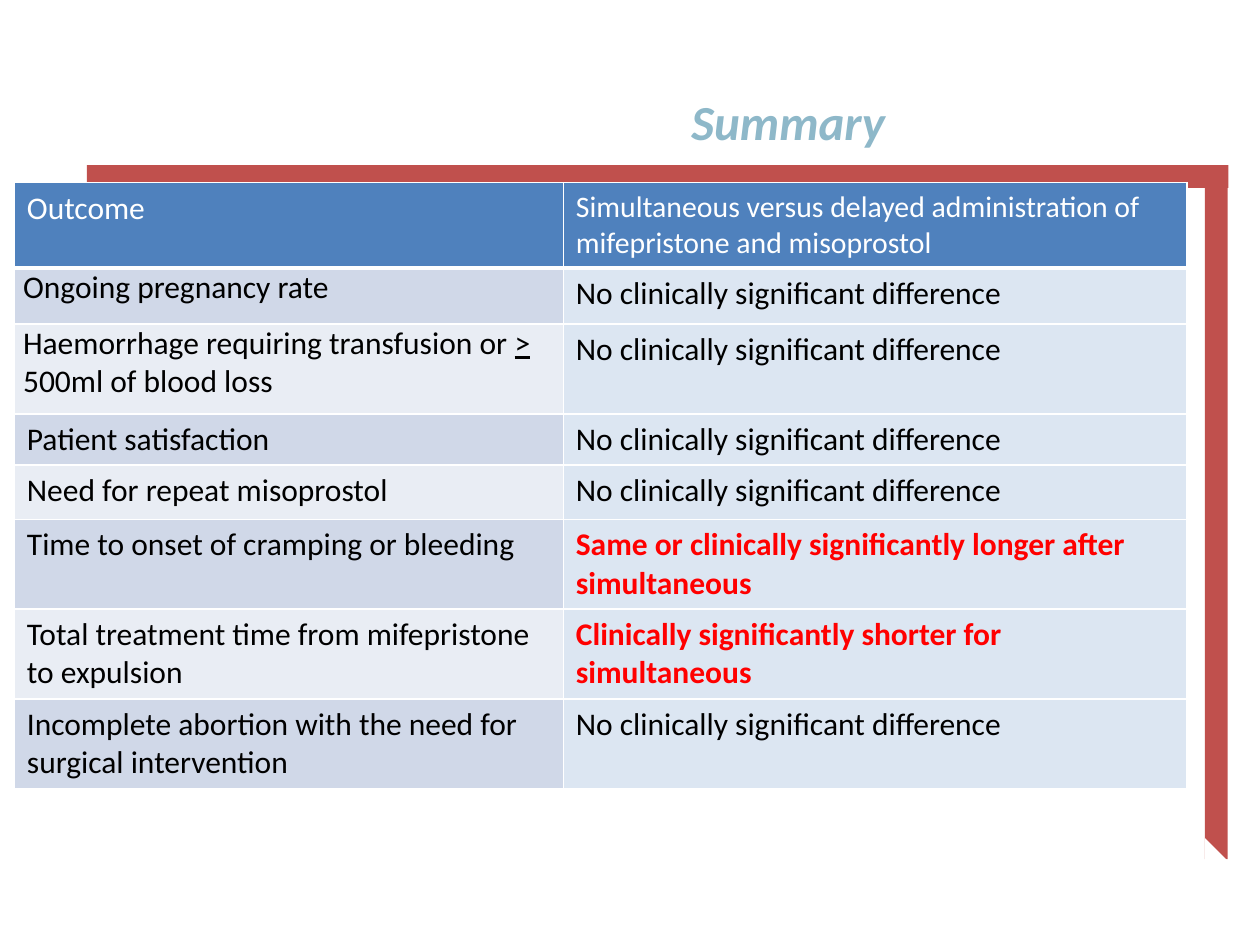
from lxml.etree import SubElement
from pptx import Presentation
from pptx.dml.color import RGBColor
from pptx.enum.shapes import MSO_SHAPE
from pptx.enum.text import MSO_ANCHOR, PP_ALIGN
from pptx.oxml.ns import qn
from pptx.util import Pt

FONT = "Calibri"
RED, WHITE, BLACK = "C0504D", "FFFFFF", "000000"
HEADER_FILL, RESULT_FILL = "4F81BD", "DCE6F2"
BAND_FILLS = ("D0D8E8", "E9EDF4")
SAME = "No clinically significant difference"
HEADINGS = (
    "Outcome",
    "Simultaneous versus delayed administration of mifepristone and misoprostol",
)
OUTCOMES = [
    (["Ongoing pregnancy rate"], SAME),
    (["Haemorrhage requiring transfusion or ", ">", " 500ml of blood loss"], SAME),
    (["Patient satisfaction"], SAME),
    (["Need for repeat misoprostol"], SAME),
    (["Time to onset of cramping or bleeding"],
     "Same or clinically significantly longer after simultaneous"),
    (["Total treatment time from mifepristone to expulsion"],
     "Clinically significantly shorter for simultaneous"),
    (["Incomplete abortion with the need for surgical intervention"], SAME),
]
COLUMN_WIDTHS = (313.7, 356.4)
ROW_HEIGHTS = (48.5, 32, 51.4, 29, 31, 51.4, 51.4, 50.4)
TIGHT_ROWS = (1, 2)


def color(value):
    """Turn a hex string into a colour."""
    return RGBColor.from_string(value)


def apply(target, values):
    """Set each attribute in the dict on the target."""
    for name, value in values.items():
        setattr(target, name, value)


def add_run(paragraph, text, size, hex_color, **values):
    """Append a formatted run to a paragraph."""
    run = paragraph.add_run()
    run.text = text
    apply(run.font, {"name": FONT, "size": Pt(size), **values})
    run.font.color.rgb = color(hex_color)


def add_block(slide, kind, left, top, width, height, fill):
    """Add a plain filled shape without outline."""
    shape = slide.shapes.add_shape(kind, Pt(left), Pt(top), Pt(width), Pt(height))
    shape.shadow.inherit = False
    shape.fill.solid()
    shape.fill.fore_color.rgb = color(fill)
    shape.line.fill.background()
    return shape


def add_frame(slide):
    """Draw the top bar and the side bar with its slanted end."""
    add_block(slide, MSO_SHAPE.RECTANGLE, 49.7, 94.3, 652.3, 13, RED)
    add_block(slide, MSO_SHAPE.RECTANGLE, 688.5, 94.3, 13, 396.7, RED)
    corner = add_block(slide, MSO_SHAPE.ISOSCELES_TRIANGLE, 688.5, 478.8, 13, 13, WHITE)
    corner.adjustments[0] = 0


def format_title(title, text):
    """Place and format the title placeholder."""
    apply(title, {"left": Pt(182.2), "top": Pt(14.4),
                  "width": Pt(517.7), "height": Pt(74.9)})
    title.text_frame.vertical_anchor = MSO_ANCHOR.BOTTOM
    paragraph = title.text_frame.paragraphs[0]
    paragraph.alignment = PP_ALIGN.CENTER
    properties = paragraph._p.get_or_add_pPr()
    properties.set("marL", str(Pt(18.7)))
    properties.set("indent", "0")
    add_run(paragraph, text, 28, "8EB8C9", bold=True, italic=True)


def format_cell(cell, fill, bottom_width=1):
    """Give a cell white borders and a solid fill."""
    properties = cell._tc.get_or_add_tcPr()
    for side, width in (("L", 1), ("R", 1), ("T", 1), ("B", bottom_width)):
        line = SubElement(properties, qn(f"a:ln{side}"), w=str(Pt(width)))
        solid = SubElement(line, qn("a:solidFill"))
        SubElement(solid, qn("a:srgbClr"), val=WHITE)
    cell.fill.solid()
    cell.fill.fore_color.rgb = color(fill)


def fill_header(table):
    """Write the heading row."""
    for column, (text, size) in enumerate(zip(HEADINGS, (18, 17))):
        cell = table.cell(0, column)
        format_cell(cell, HEADER_FILL, 3)
        add_run(cell.text_frame.paragraphs[0], text, size, WHITE, bold=False)


def fill_outcome(table, row, parts, result):
    """Write one outcome and its result."""
    outcome_cell, result_cell = table.cell(row, 0), table.cell(row, 1)
    format_cell(outcome_cell, BAND_FILLS[(row - 1) % 2])
    format_cell(result_cell, RESULT_FILL)
    if row in TIGHT_ROWS:
        apply(outcome_cell, {"margin_left": Pt(5), "margin_right": Pt(5),
                             "margin_top": 0, "margin_bottom": 0})
    for part in parts:
        add_run(outcome_cell.text_frame.paragraphs[0], part, 18, BLACK,
                underline=part == ">")
    differs = result != SAME
    add_run(result_cell.text_frame.paragraphs[0], result, 18,
            "FF0000" if differs else BLACK, bold=differs)


def add_summary_table(slide):
    """Add the table of outcomes."""
    frame = slide.shapes.add_table(
        len(ROW_HEIGHTS), len(COLUMN_WIDTHS), Pt(8.2), Pt(104.4),
        Pt(sum(COLUMN_WIDTHS)), Pt(sum(ROW_HEIGHTS)))
    table = frame.table
    for column, width in zip(table.columns, COLUMN_WIDTHS):
        column.width = Pt(width)
    for row, height in zip(table.rows, ROW_HEIGHTS):
        row.height = Pt(height)
    fill_header(table)
    for row, (parts, result) in enumerate(OUTCOMES, 1):
        fill_outcome(table, row, parts, result)


def main():
    """Build and save the slide."""
    presentation = Presentation()
    apply(presentation, {"slide_width": Pt(720), "slide_height": Pt(540)})
    slide = presentation.slides.add_slide(presentation.slide_layouts[5])
    add_frame(slide)
    format_title(slide.shapes.title, "Summary")
    add_summary_table(slide)
    presentation.save("out.pptx")


if __name__ == "__main__":
    main()
